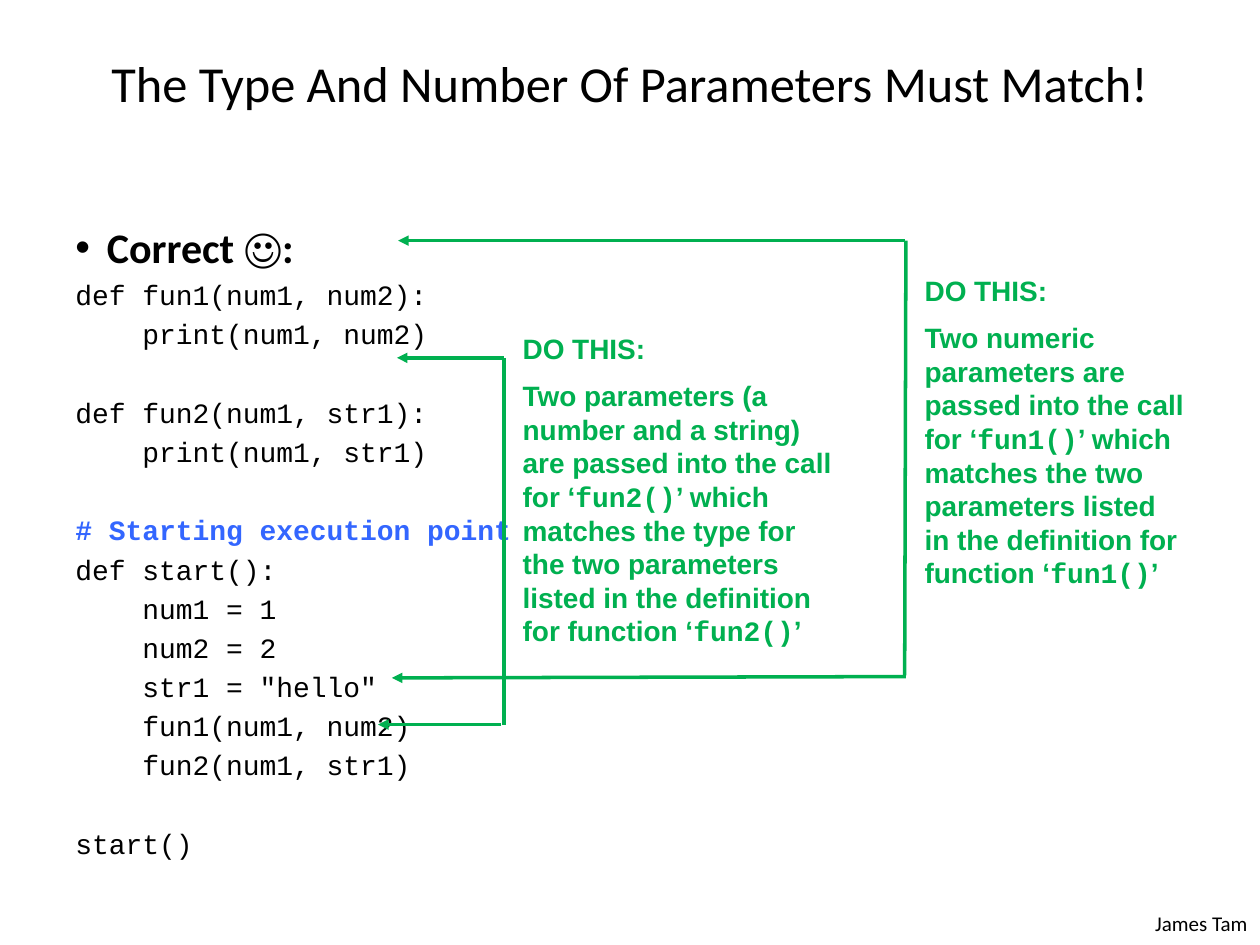
"""Build a slide showing that call arguments must match a function's parameters."""
import dataclasses
import typing

import pptx
import pptx.dml.color
import pptx.enum.dml
import pptx.enum.shapes
import pptx.enum.text
import pptx.oxml.ns
import pptx.util
from lxml import etree

Align = pptx.enum.text.PP_ALIGN
Anchor = pptx.enum.text.MSO_ANCHOR
WIDTH, HEIGHT = 10, 7.5
COLUMNS, ROWS = 100, 75


@dataclasses.dataclass(frozen=True)
class Theme:
    ink: str = "000000"
    accent: str = "00B050"
    comment: str = "3366FF"
    sans: str = "Calibri"
    label: str = "Arial"
    mono: str = "Courier New"
    title_size: float = 28.8
    heading_size: float = 24
    text_size: float = 16
    footer_size: float = 12
    line_width: float = 2
    code_pitch: float = 22.4
    code_gap: float = 4.2
    label_pitch: float = 19.2
    label_gap: float = 8


THEME = Theme()


class Area(typing.NamedTuple):
    column: float
    row: float
    columns: float
    rows: float


class Point(typing.NamedTuple):
    column: float
    row: float


@dataclasses.dataclass(frozen=True)
class Link:
    start: Point
    end: Point
    arrow: bool = False


@dataclasses.dataclass(frozen=True)
class Note:
    area: Area
    function: str
    opening: str
    middle: str
    links: tuple[Link, ...]


CODE = (
    "def fun1(num1, num2):\n    print(num1, num2)",
    "def fun2(num1, str1):\n    print(num1, str1)",
    "# Starting execution point\ndef start():\n    num1 = 1\n    num2 = 2\n"
    "    str1 = \"hello\"\n    fun1(num1, num2)\n    fun2(num1, str1)",
    "start()",
)

NOTES = (
    Note(
        Area(72.4, 21.2, 22.8, 26.6), "fun1()",
        "Two numeric parameters are passed into the call for ‘",
        "’ which matches the two parameters listed in the definition for function ‘",
        (
            Link(Point(71.9, 53.7), Point(31.1, 53.8), True),
            Link(Point(71.8, 19.1), Point(31.6, 19.1), True),
            Link(Point(71.9, 19.1), Point(71.8, 53.6)),
        ),
    ),
    Note(
        Area(40.5, 25.8, 27.1, 26.6), "fun2()",
        "Two parameters (a number and a string) are passed into the call for ‘",
        "’ which matches the type for the two parameters listed in the definition for function ‘",
        (
            Link(Point(40, 28.4), Point(31.5, 28.4), True),
            Link(Point(40, 28.4), Point(40, 57.5)),
            Link(Point(39.8, 57.5), Point(30, 57.5), True),
        ),
    ),
)


def across(columns: float) -> int:
    """Convert grid columns to a length."""
    return pptx.util.Inches(WIDTH * columns / COLUMNS)


def down(rows: float) -> int:
    """Convert grid rows to a length."""
    return pptx.util.Inches(HEIGHT * rows / ROWS)


def add_box(page, area: Area, anchor=Anchor.TOP, top_rows: float = 0.5):
    """Add a wrapping text box and return its frame."""
    box = page.shapes.add_textbox(
        across(area.column), down(area.row), across(area.columns), down(area.rows))
    frame = box.text_frame
    frame.word_wrap = True
    frame.vertical_anchor = anchor
    frame.margin_top = down(top_rows)
    return frame


def add_para(frame, align=Align.LEFT, before: float = 0, pitch: float | None = None):
    """Return a formatted paragraph, using the frame's first one while it is empty."""
    first = frame.paragraphs[0]
    para = frame.add_paragraph() if first.runs else first
    para.alignment = align
    para.space_before = pptx.util.Pt(before)
    if pitch:
        para.line_spacing = pptx.util.Pt(pitch)
    return para


def add_span(para, text: str, *, size: float = THEME.text_size, font: str = THEME.sans,
             color: str = THEME.ink, bold: bool = False) -> None:
    """Append text in the given format."""
    span = para.add_run()
    span.text = text
    span.font.size = pptx.util.Pt(size)
    span.font.name = font
    span.font.bold = bold
    span.font.color.rgb = pptx.dml.color.RGBColor.from_string(color)


def add_bullet(para) -> None:
    """Give a paragraph a hanging bullet."""
    properties = para._p.get_or_add_pPr()
    properties.set("marL", str(across(2.5)))
    properties.set("indent", str(-across(2.5)))
    etree.SubElement(properties, pptx.oxml.ns.qn("a:buFont"), typeface=THEME.label)
    etree.SubElement(properties, pptx.oxml.ns.qn("a:buChar"), char="•")


def add_link(page, link: Link) -> None:
    """Draw a straight link, with an arrowhead at its end if wanted."""
    line = page.shapes.add_connector(
        pptx.enum.shapes.MSO_CONNECTOR.STRAIGHT,
        across(link.start.column), down(link.start.row),
        across(link.end.column), down(link.end.row))
    line.line.width = pptx.util.Pt(THEME.line_width)
    line.line.color.rgb = pptx.dml.color.RGBColor.from_string(THEME.accent)
    if link.arrow:
        etree.SubElement(line.line._get_or_add_ln(), pptx.oxml.ns.qn("a:tailEnd"), type="triangle")
    etree.SubElement(line._element.spPr, pptx.oxml.ns.qn("a:effectLst"))


def add_code(page) -> None:
    """Write the heading and the program below it."""
    frame = add_box(page, Area(5, 12.5, 90, 59.2), top_rows=5.1)
    heading = add_para(frame, before=THEME.code_gap)
    add_bullet(heading)
    add_span(heading, "Correct ☺:", size=THEME.heading_size, bold=True)
    for block_number, block in enumerate(CODE):
        for line_number, text in enumerate(block.split("\n")):
            new_block = block_number > 0 and line_number == 0
            before = THEME.code_gap + (THEME.code_pitch if new_block else 0)
            para = add_para(frame, before=before, pitch=THEME.code_pitch - THEME.code_gap)
            comment = text.startswith("#")
            add_span(para, text, font=THEME.mono, bold=comment,
                     color=THEME.comment if comment else THEME.ink)


def add_note(page, note: Note) -> None:
    """Draw a note's links and write its explanation."""
    for link in note.links:
        add_link(page, link)
    frame = add_box(page, note.area)
    parts = (("DO THIS:",), (note.opening, note.function, note.middle, note.function, "’"))
    for number, spans in enumerate(parts):
        para = add_para(frame, before=THEME.label_gap * number, pitch=THEME.label_pitch)
        for text in spans:
            font = THEME.mono if text == note.function else THEME.label
            add_span(para, text, font=font, color=THEME.accent, bold=True)


def main() -> None:
    """Build and save the deck."""
    deck = pptx.Presentation()
    deck.slide_width, deck.slide_height = across(COLUMNS), down(ROWS)
    page = deck.slides.add_slide(deck.slide_layouts[6])
    footer = add_para(add_box(page, Area(86.7, 71.8, 13.3, 3)), Align.RIGHT)
    add_span(footer, "James Tam", size=THEME.footer_size)
    title = add_para(add_box(page, Area(5, 3, 90, 7), Anchor.MIDDLE), Align.CENTER)
    add_span(title, "The Type And Number Of Parameters Must Match!", size=THEME.title_size)
    add_code(page)
    for note in NOTES:
        add_note(page, note)
    deck.save("out.pptx")


if __name__ == "__main__":
    main()
